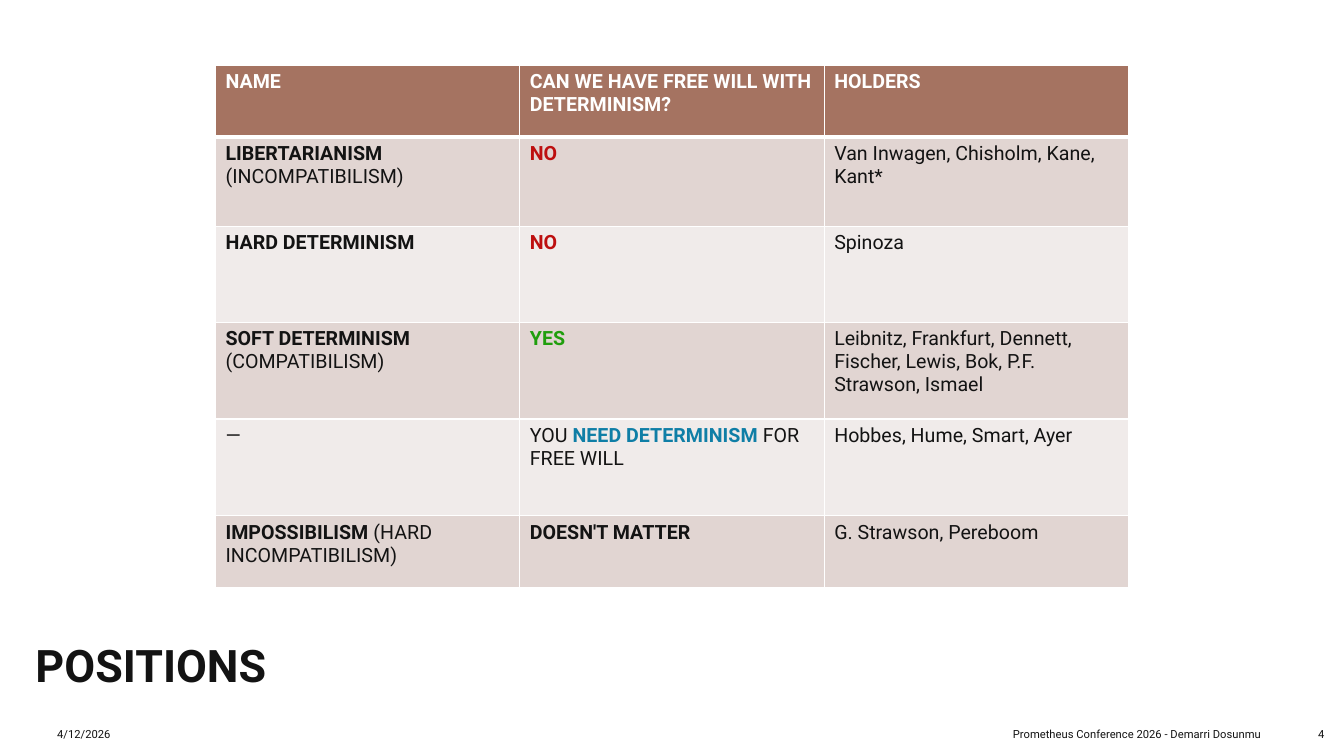
from dataclasses import dataclass

from lxml.etree import SubElement as Sub
from pptx import Presentation
from pptx.dml.color import RGBColor as Rgb
from pptx.enum.text import MSO_ANCHOR as Anchor, MSO_AUTO_SIZE as Fit, PP_ALIGN as Align
from pptx.oxml.ns import qn
from pptx.util import Cm, Pt


@dataclass(frozen=True)
class Theme:
    font: str = "Roboto"
    ink: str = "131313"
    white: str = "FFFFFF"
    red: str = "BD0F0F"
    green: str = "209E0D"
    blue: str = "0F7EA6"
    head: str = "A57361"
    bands: tuple = ("E1D5D2", "F0EBEA")
    title: int = 32
    body: int = 14
    small: int = 8


T = Theme()


def bold(text, color=T.ink):
    """Return a bold run."""
    return text, color, True


def plain(text):
    """Return a regular run in the ink colour."""
    return text, T.ink, False


TITLE = "POSITIONS"
HEADS = ["NAME", "CAN WE HAVE FREE WILL WITH DETERMINISM?", "HOLDERS"]
VIEWS = [
    [[bold("LIBERTARIANISM"), plain(" (INCOMPATIBILISM)")],
     [bold("NO", T.red)],
     [plain("Van Inwagen, Chisholm, Kane, Kant*")]],
    [[bold("HARD DETERMINISM")],
     [bold("NO", T.red)],
     [plain("Spinoza")]],
    [[bold("SOFT DETERMINISM"), plain(" (COMPATIBILISM)")],
     [bold("YES", T.green)],
     [plain("Leibnitz, Frankfurt, Dennett, Fischer, Lewis, Bok, P.F. Strawson, Ismael")]],
    [[plain("—")],
     [plain("YOU"), bold(" NEED DETERMINISM ", T.blue), plain("FOR FREE WILL")],
     [plain("Hobbes, Hume, Smart, Ayer")]],
    [[bold("IMPOSSIBILISM"), plain(" (HARD INCOMPATIBILISM)")],
     [bold("DOESN'T MATTER")],
     [plain("G. Strawson, Pereboom")]],
]
ROWS = [1.8, 2.26, 2.41, 2.44, 2.44, 1.8]
WIDTH = 7.67
FOOT = [
    ("4/12/2026", 1.19, 7.9, Align.LEFT),
    ("Prometheus Conference 2026 - Demarri Dosunmu ", 24.71, 7.4, Align.RIGHT),
    ("4", 32.36, 1.27, Align.RIGHT),
]


def write(frame, runs, size=T.body, align=Align.LEFT, anchor=Anchor.TOP, lead=1.0):
    """Fill a text frame with one paragraph of formatted runs."""
    frame.word_wrap = True
    frame.vertical_anchor = anchor
    para = frame.paragraphs[0]
    para.alignment = align
    para.line_spacing = lead
    for text, color, strong in runs:
        run = para.add_run()
        run.text = text
        font = run.font
        font.name, font.size, font.bold = T.font, Pt(size), strong
        font.color.rgb = Rgb.from_string(color)


def edge(cell, row):
    """Draw white cell borders, thicker under the header."""
    props = cell._tc.get_or_add_tcPr()
    thick = {(0, "B"), (1, "T")}
    for side in "LRTB":
        width = Pt(3 if (row, side) in thick else 1)
        line = Sub(props, qn(f"a:ln{side}"), w=str(width))
        Sub(Sub(line, qn("a:solidFill")), qn("a:srgbClr"), val=T.white)


def draw_table(slide):
    """Draw the table of positions."""
    cells = [[[bold(head, T.white)] for head in HEADS]] + VIEWS
    cols = len(HEADS)
    grid = slide.shapes.add_table(len(cells), cols, Cm(5.43), Cm(1.65),
                                  Cm(WIDTH * cols), Cm(sum(ROWS))).table
    for col in grid.columns:
        col.width = Cm(WIDTH)
    for r, line in enumerate(cells):
        grid.rows[r].height = Cm(ROWS[r])
        for c, runs in enumerate(line):
            cell = grid.cell(r, c)
            edge(cell, r)
            cell.fill.solid()
            tint = T.bands[(r - 1) % 2] if r else T.head
            cell.fill.fore_color.rgb = Rgb.from_string(tint)
            write(cell.text_frame, runs)


def main():
    """Build the slide and save it."""
    deck = Presentation()
    deck.slide_width, deck.slide_height = Cm(33.87), Cm(19.05)
    slide = deck.slides.add_slide(deck.slide_layouts[5])
    title = slide.shapes.title
    title.left, title.top, title.width, title.height = map(Cm, (0.64, 16.1, 10.95, 3.86))
    title.text_frame.auto_size = Fit.NONE
    write(title.text_frame, [bold(TITLE)], size=T.title, lead=0.9)
    draw_table(slide)
    for text, left, width, align in FOOT:
        box = slide.shapes.add_textbox(Cm(left), Cm(18.03), Cm(width), Cm(0.94))
        write(box.text_frame, [plain(text)], size=T.small, align=align, anchor=Anchor.MIDDLE)
    deck.save("out.pptx")


if __name__ == "__main__":
    main()
